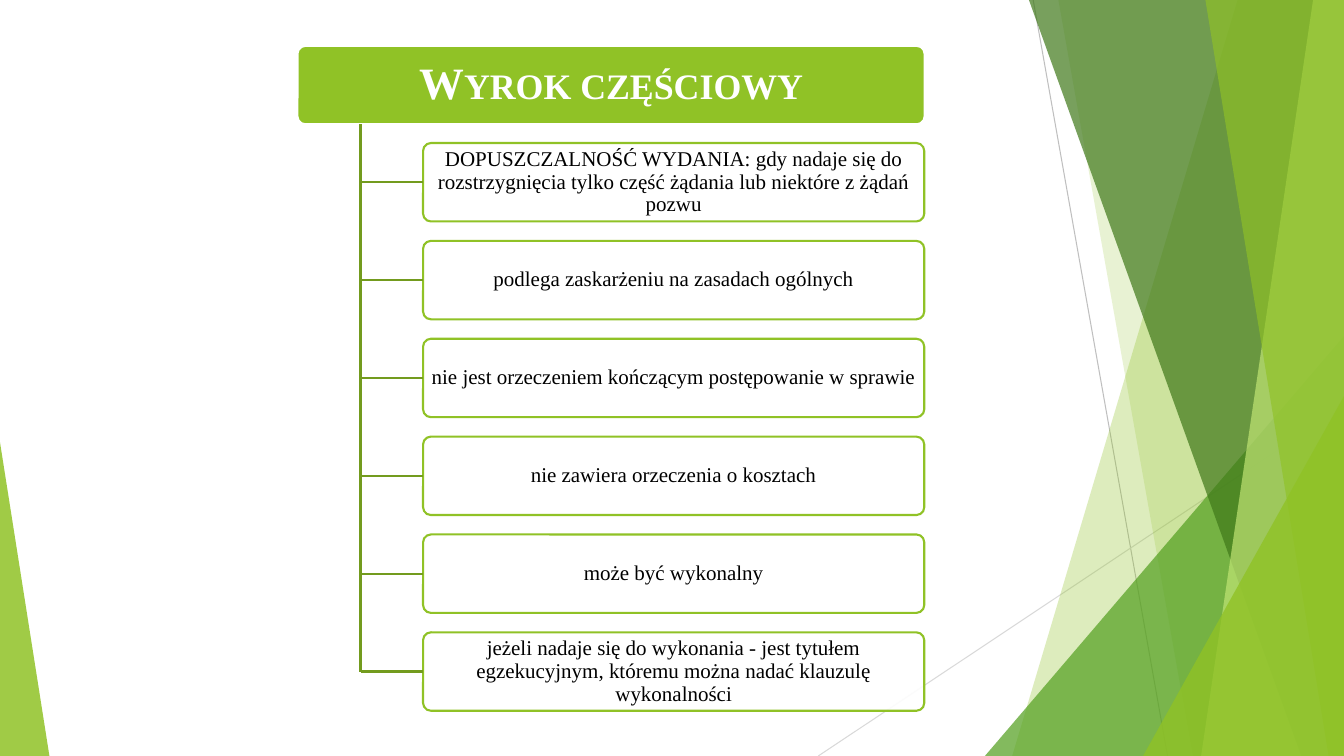
from pptx import Presentation, util as u
from pptx.dml.color import RGBColor
from pptx.enum import shapes as es, text as et
from pptx.oxml import ns
from lxml import etree

Pt = u.Pt
WHITE = RGBColor(0xFF, 0xFF, 0xFF)
BLACK = RGBColor(0, 0, 0)
LIME = RGBColor(0x90, 0xC2, 0x26)
PALE = RGBColor(0xC0, 0xE4, 0x74)
GREEN = RGBColor(0x54, 0xA0, 0x21)
DARK = RGBColor(0x3F, 0x78, 0x19)
OLIVE = RGBColor(0x73, 0x9B, 0x1E)
GREY = RGBColor(0xBF, 0xBF, 0xBF)
SILVER = RGBColor(0xD9, 0xD9, 0xD9)

WIDE, HIGH = 960, 540
HEAD = (212.5, 32.8, 448, 56)
TRUNK = 257.8
LEFT, TOP, BOX_W, BOX_H, STEP = 302.2, 102.2, 358, 56, 69.9
FACE = "Times New Roman"
HEAD_FONT = {"name": FACE, "size": Pt(32), "bold": True}
ITEM_FONT = {"name": FACE, "size": Pt(15), "bold": False}

TITLE = "Wyrok częściowy"
ITEMS = [
    "DOPUSZCZALNOŚĆ WYDANIA: gdy nadaje się do rozstrzygnięcia "
    "tylko część żądania lub niektóre z żądań pozwu",
    "podlega zaskarżeniu na zasadach ogólnych",
    "nie jest orzeczeniem kończącym postępowanie w sprawie",
    "nie zawiera orzeczenia o kosztach",
    "może być wykonalny",
    "jeżeli nadaje się do wykonania - jest tytułem egzekucyjnym, "
    "któremu można nadać klauzulę wykonalności",
]


def paint(shape, color, alpha=100, edge=None):
    """Fill a shape at a given opacity and outline it if an edge is given."""
    shape.shadow.inherit = False
    shape.fill.solid()
    shape.fill.fore_color.rgb = color
    if alpha < 100:
        tint = shape._element.spPr.find(".//" + ns.qn("a:srgbClr"))
        etree.SubElement(tint, ns.qn("a:alpha")).set("val", str(alpha * 1000))
    if edge is None:
        shape.line.fill.background()
    else:
        shape.line.color.rgb = edge
        shape.line.width = Pt(1.5)


def preset(slide, kind, area, adj):
    """Add a preset shape with its first adjustment set."""
    shape = slide.shapes.add_shape(kind, *map(Pt, area))
    shape.adjustments[0] = adj
    return shape


def wedge(slide, area, adj, color, alpha):
    """Add a translucent triangle."""
    shape = preset(slide, es.MSO_SHAPE.ISOSCELES_TRIANGLE, area, adj)
    paint(shape, color, alpha)


def band(slide, top, foot, color, alpha):
    """Add a translucent band that reaches the right edge of the slide."""
    spots = [(WIDE, 0), (WIDE, HIGH), (foot, HIGH)]
    form = slide.shapes.build_freeform(Pt(top), 0, 1)
    form.add_line_segments([(Pt(x), Pt(y)) for x, y in spots], close=True)
    paint(form.convert_to_shape(), color, alpha)


def link(slide, start, end, color, width, box=None):
    """Draw a straight line, joined to the left side of a box if given."""
    line = slide.shapes.add_connector(
        es.MSO_CONNECTOR.STRAIGHT, *map(Pt, (*start, *end)))
    if box is not None:
        line.end_connect(box, 1)
    line.line.color.rgb = color
    line.line.width = Pt(width)
    etree.SubElement(line._element.spPr, ns.qn("a:effectLst"))


def write(shape, words, font, color, inset):
    """Put centred text into a shape."""
    frame = shape.text_frame
    frame.text = words
    form = {"word_wrap": True, "auto_size": et.MSO_AUTO_SIZE.NONE,
            "vertical_anchor": et.MSO_ANCHOR.MIDDLE}
    form.update({"margin_" + side: Pt(inset)
                 for side in ("left", "right", "top", "bottom")})
    para = frame.paragraphs[0]
    lay = {"alignment": et.PP_ALIGN.CENTER, "line_spacing": 0.9}
    face = para.runs[0].font
    for goal, values in ((frame, form), (para, lay), (face, font)):
        for key, value in values.items():
            setattr(goal, key, value)
    face.color.rgb = color


def scene(slide):
    """Draw the green facets at both sides of the slide."""
    link(slide, (738, 0), (834, HIGH), GREY, 0.75)
    link(slide, (WIDE, 290), (584.5, HIGH), SILVER, 0.75)
    band(slide, 884, 723, LIME, 30)
    band(slide, 756, 852, LIME, 20)
    wedge(slide, (703.5, 240, 256.5, 300), 1, GREEN, 72)
    band(slide, 735, 929.5, DARK, 70)
    band(slide, 938, 858, PALE, 70)
    band(slide, 861, 949, LIME, 65)
    wedge(slide, (816.5, 283, 143.5, 257), 1, LIME, 80)
    wedge(slide, (0, 316, 35.3, 224), 0, LIME, 85)


def header(slide):
    """Draw the header bar and lay the title over it."""
    bar = preset(slide, es.MSO_SHAPE.ROUNDED_RECTANGLE, HEAD, 0.1)
    paint(bar, LIME, edge=WHITE)
    title = slide.shapes.title
    title.left, title.top, title.width, title.height = map(Pt, HEAD)
    write(title, TITLE, HEAD_FONT, WHITE, 4)
    title.text_frame.paragraphs[0].runs[0].font._element.set("cap", "small")
    bar._element.addnext(title._element)


def tree(slide):
    """Draw the item boxes and the lines that tie them to the header."""
    for row, words in enumerate(ITEMS):
        top = TOP + row * STEP
        mid = top + BOX_H / 2
        box = preset(slide, es.MSO_SHAPE.ROUNDED_RECTANGLE,
                     (LEFT, top, BOX_W, BOX_H), 0.1)
        paint(box, WHITE, 90, LIME)
        write(box, words, ITEM_FONT, BLACK, 2)
        link(slide, (TRUNK, mid), (LEFT, mid), OLIVE, 1.5, box)
    link(slide, (TRUNK, HEAD[1] + HEAD[3]), (TRUNK, mid), OLIVE, 2)


def main():
    """Build the slide and save it."""
    deck = Presentation()
    deck.slide_width, deck.slide_height = Pt(WIDE), Pt(HIGH)
    slide = deck.slides.add_slide(deck.slide_layouts[5])
    scene(slide)
    header(slide)
    tree(slide)
    deck.save("out.pptx")


if __name__ == "__main__":
    main()
